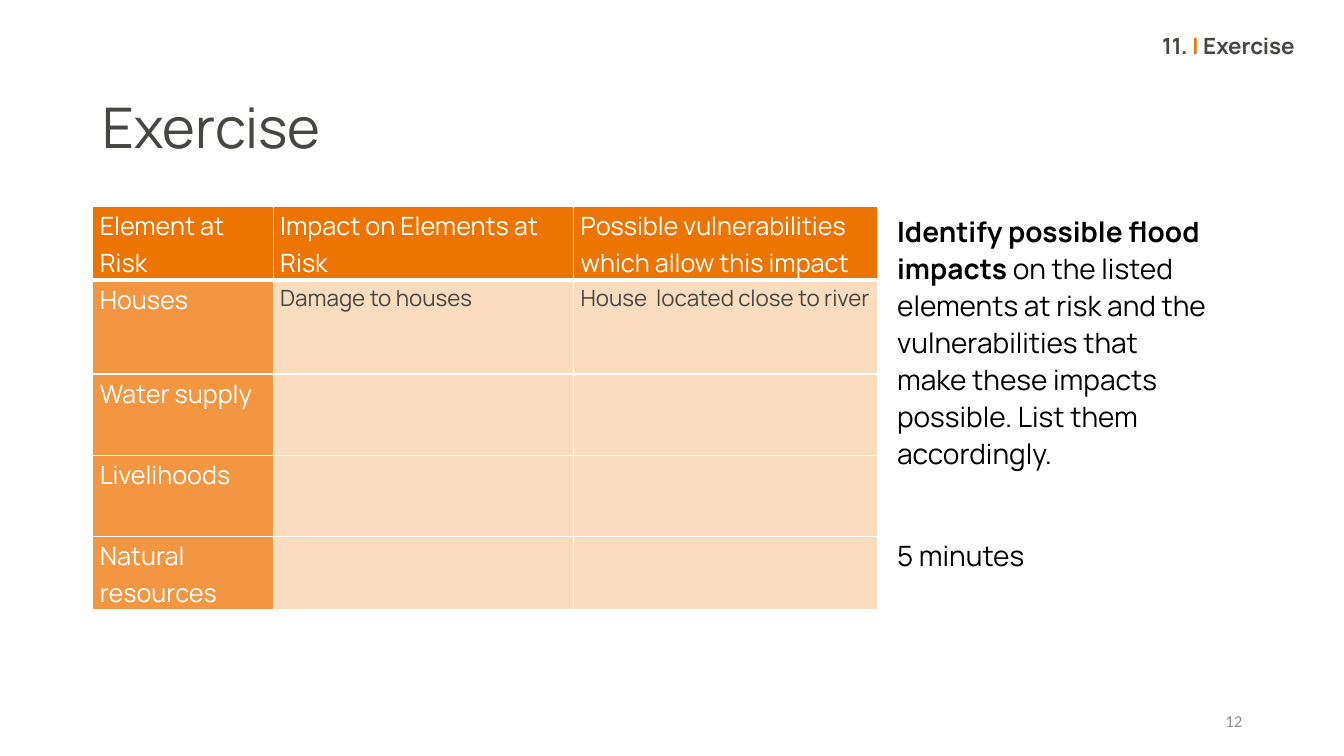
from lxml import etree
from pptx import Presentation
from pptx.dml.color import RGBColor
from pptx.enum import text as t
from pptx.oxml.ns import qn
from pptx.util import Inches, Pt

ORANGE = RGBColor(0xEE, 0x74, 0x02)
WHITE = RGBColor(0xFF, 0xFF, 0xFF)
BLACK = RGBColor(0, 0, 0)
DARK = RGBColor(0x46, 0x46, 0x43)
GREY = RGBColor(0x8C, 0x8C, 0x8C)

RISK_ROWS = [
    ("Element at Risk", "Impact on Elements at Risk",
     "Possible vulnerabilities which allow this impact"),
    ("Houses", "Damage to houses", "House  located close to river"),
    ("Water supply", "", ""),
    ("Livelihoods", "", ""),
    ("Natural resources", "", ""),
]
TABLE_BOX = (0.92, 2.05, 7.78, 3.87)
COLUMN_WIDTHS = (1.79, 2.98, 3.01)
ROW_HEIGHTS = (0.64, 0.93, 0.81, 0.8, 0.69)
CELL_MARGINS = {"margin_left": Inches(0.07), "margin_right": Inches(0.07),
                "margin_top": 0, "margin_bottom": 0}

# Each paragraph: (format, [(words, colour, bold), ...])
TEXTS = [
    {"box": (0.92, 0.94, 10.33, 0.72), "font": "Manrope", "size": 40,
     "paragraphs": [({"line_spacing": 0.9}, [("Exercise", DARK, False)])]},
    {"box": (8.8, 2.05, 3.3, 3.88), "font": "Manrope", "size": 20,
     "paragraphs": [
         ({"line_spacing": 1.1},
          [("Identify possible flood impacts ", BLACK, True),
           ("on the listed elements at risk and the vulnerabilities that make "
            "these impacts possible. List them accordingly.", BLACK, False)]),
         ({"line_spacing": 1.1, "space_before": Pt(46.4)},
          [("5 minutes", BLACK, False)])]},
    {"box": (7.98, 0.3, 4.96, 1.09), "font": "Manrope", "size": 16,
     "paragraphs": [({"line_spacing": 0.9, "alignment": t.PP_ALIGN.RIGHT},
                     [("11. ", DARK, True), ("| ", ORANGE, True),
                      ("Exercise", DARK, True)])]},
    {"box": (9.42, 6.95, 3, 0.4), "font": "Calibri", "size": 12,
     "anchor": t.MSO_ANCHOR.MIDDLE,
     "paragraphs": [({"alignment": t.PP_ALIGN.RIGHT}, [("12", GREY, False)])]},
]


def set_all(target, values):
    for name, value in values.items():
        setattr(target, name, value)


def add_run(paragraph, words, font, size, color, bold=False):
    run = paragraph.add_run()
    run.text = words
    set_all(run.font, {"name": font, "size": Pt(size), "bold": bold})
    run.font.color.rgb = color


def add_text(slide, item):
    frame = slide.shapes.add_textbox(*map(Inches, item["box"])).text_frame
    set_all(frame, {"word_wrap": True,
                    "vertical_anchor": item.get("anchor", t.MSO_ANCHOR.TOP)})
    for i, (layout, runs) in enumerate(item["paragraphs"]):
        paragraph = frame.add_paragraph() if i else frame.paragraphs[0]
        set_all(paragraph, layout)
        for words, color, bold in runs:
            add_run(paragraph, words, item["font"], item["size"], color, bold)


def paint_cell(cell, opacity, bottom_width):
    """Fill in orange at a percentage of opacity, with white borders."""
    cell.fill.solid()
    cell.fill.fore_color.rgb = ORANGE
    properties = cell._tc.tcPr
    if opacity < 100:
        tint = properties.find(".//" + qn("a:srgbClr"))
        etree.SubElement(tint, qn("a:alpha"), val=str(opacity * 1000))
    sides = (("a:lnL", 1), ("a:lnR", 1), ("a:lnT", 1), ("a:lnB", bottom_width))
    for i, (side, width) in enumerate(sides):
        line = etree.Element(qn(side), w=str(Pt(width)))
        fill = etree.SubElement(line, qn("a:solidFill"))
        etree.SubElement(fill, qn("a:srgbClr"), val=str(WHITE))
        properties.insert(i, line)


def add_risk_table(slide):
    table = slide.shapes.add_table(len(RISK_ROWS), len(COLUMN_WIDTHS),
                                   *map(Inches, TABLE_BOX)).table
    set_all(table, {"first_row": False, "horz_banding": False})
    for column, width in zip(table.columns, COLUMN_WIDTHS):
        column.width = Inches(width)
    for row, height in zip(table.rows, ROW_HEIGHTS):
        row.height = Inches(height)
    for r, row in enumerate(RISK_ROWS):
        for c, words in enumerate(row):
            cell = table.cell(r, c)
            header, answer = r == 0, r > 0 and c > 0
            set_all(cell, CELL_MARGINS)
            if header:
                cell.vertical_anchor = t.MSO_ANCHOR.MIDDLE
            paint_cell(cell, 100 if header else 25 if answer else 75,
                       3 if header else 1)
            if words:
                paragraph = cell.text_frame.paragraphs[0]
                set_all(paragraph, {"line_spacing": 1.07, "space_after": Pt(8)})
                add_run(paragraph, words, "Manrope", 16 if answer else 18,
                        DARK if answer else WHITE)


def main():
    deck = Presentation()
    set_all(deck, {"slide_width": Inches(13.33), "slide_height": Inches(7.5)})
    slide = deck.slides.add_slide(deck.slide_layouts[6])
    add_risk_table(slide)
    for item in TEXTS:
        add_text(slide, item)
    deck.save("out.pptx")


if __name__ == "__main__":
    main()
